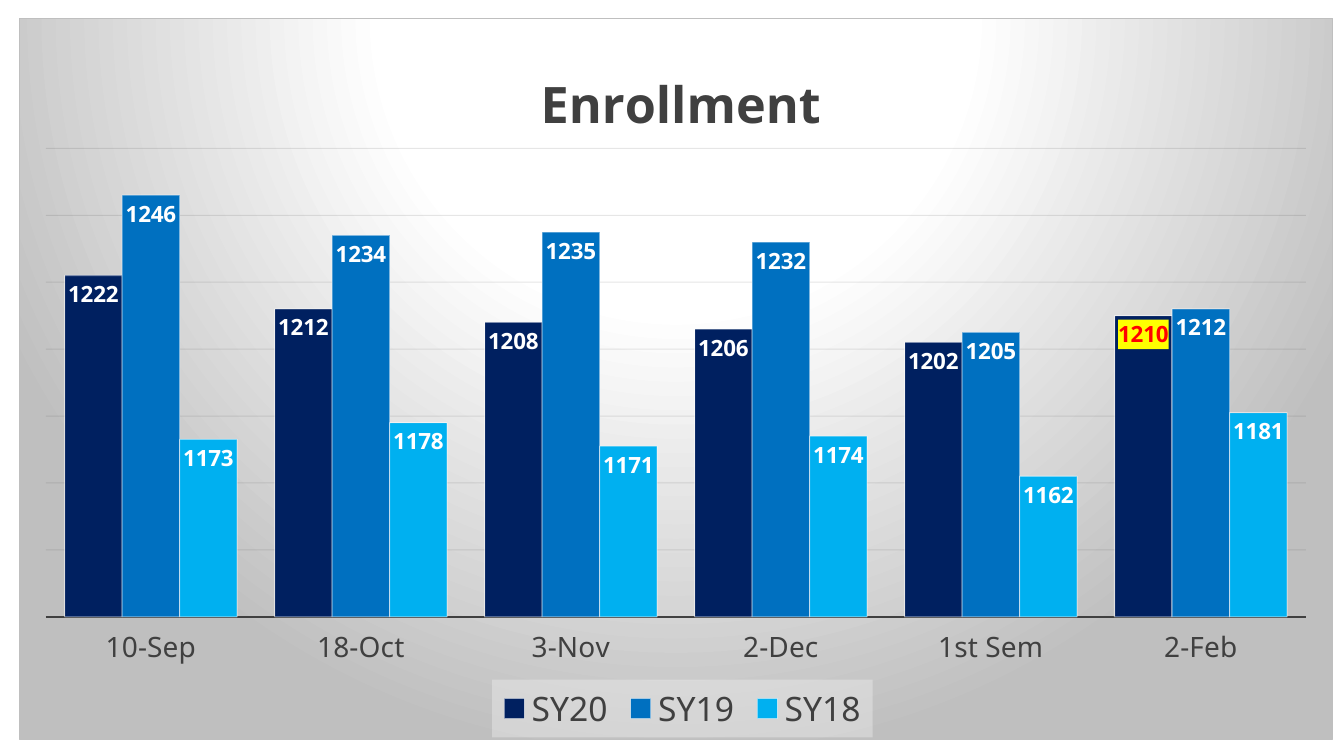
from typing import NamedTuple

from lxml import etree
from pptx import Presentation
from pptx.chart.data import CategoryChartData
from pptx.dml.color import RGBColor
from pptx.enum.chart import XL_CHART_TYPE, XL_LABEL_POSITION, XL_LEGEND_POSITION, XL_TICK_LABEL_POSITION, XL_TICK_MARK
from pptx.oxml import parse_xml
from pptx.oxml.ns import nsdecls, qn
from pptx.util import Pt

COLUMNS = XL_CHART_TYPE.COLUMN_CLUSTERED
INSIDE_END = XL_LABEL_POSITION.INSIDE_END
BOTTOM = XL_LEGEND_POSITION.BOTTOM
NO_TICK = XL_TICK_MARK.NONE
LOW = XL_TICK_LABEL_POSITION.LOW
FONT = "Noto Sans"
GREY = "404040"


class SchoolYear(NamedTuple):
    name: str
    color: str
    enrolled: tuple[int, ...]


DATES = ("10-Sep", "18-Oct", "3-Nov", "2-Dec", "1st Sem", "2-Feb")
YEARS = (
    SchoolYear("SY20", "002060", (1222, 1212, 1208, 1206, 1202, 1210)),
    SchoolYear("SY19", "0070C0", (1246, 1234, 1235, 1232, 1205, 1212)),
    SchoolYear("SY18", "00B0F0", (1173, 1178, 1171, 1174, 1162, 1181)),
)


def rgb(color: str) -> RGBColor:
    return RGBColor.from_string(color)


def set_font(font, size: float, color: str, bold: bool = False) -> None:
    font.name = FONT
    font.size = Pt(size)
    font.bold = bold
    font.color.rgb = rgb(color)


def set_line(line, color: str, width: float, opacity: int = 100) -> None:
    """Format a line, with its opacity in percent."""
    line.width = Pt(width)
    line.color.rgb = rgb(color)
    if opacity < 100:
        for clr in line._ln.iter(qn("a:srgbClr")):
            etree.SubElement(clr, qn("a:alpha"), val=str(opacity * 1000))


def shape_properties(content: str):
    return parse_xml(f"<c:spPr {nsdecls('c', 'a')}>{content}</c:spPr>")


def solid(color: str, opacity: int = 100) -> str:
    return (f'<a:solidFill><a:srgbClr val="{color}"><a:alpha val="{opacity * 1000}"/>'
            "</a:srgbClr></a:solidFill>")


def place(parent, index: int, target: str = "", **fractions: float) -> None:
    """Lay out a chart part by fractions of the chart area."""
    layout = parent.find(qn("c:layout"))
    if layout is None:
        layout = etree.Element(qn("c:layout"))
        parent.insert(index, layout)
    manual = etree.SubElement(layout, qn("c:manualLayout"))
    if target:
        etree.SubElement(manual, qn("c:layoutTarget"), val=target)
    for mode in ("xMode", "yMode"):
        etree.SubElement(manual, qn(f"c:{mode}"), val="edge")
    for key, value in fractions.items():
        etree.SubElement(manual, qn(f"c:{key}"), val=str(value))


def format_area(chart) -> None:
    """Give the chart area its radial gradient and border."""
    stops = "".join(f'<a:gs pos="{pos * 1000}"><a:srgbClr val="{color}"/></a:gs>'
                    for pos, color in ((0, "FFFFFF"), (39, "FFFFFF"), (100, "BFBFBF")))
    area = shape_properties(
        f'<a:gradFill><a:gsLst>{stops}</a:gsLst><a:path path="circle">'
        '<a:fillToRect l="50000" t="-80000" r="50000" b="180000"/></a:path></a:gradFill>'
        f'<a:ln w="{Pt(0.75)}">{solid("BFBFBF")}</a:ln>')
    chart.element.find(qn("c:chart")).addnext(area)


def format_title(chart) -> None:
    chart.has_title = True
    title = chart.chart_title
    title.include_in_layout = False
    p = title.text_frame.paragraphs[0]
    p.text = "Enrollment"
    set_font(p.font, 36, GREY, bold=True)
    place(chart.element.xpath("c:chart/c:title")[0], 1, x=0.39, y=0.05)


def format_axes(chart) -> None:
    dates = chart.category_axis
    dates.major_tick_mark = dates.minor_tick_mark = NO_TICK
    dates.tick_label_position = LOW
    set_font(dates.tick_labels.font, 20, GREY)
    set_line(dates.format.line, GREY, 1.5)
    values = chart.value_axis
    values.minimum_scale, values.maximum_scale, values.major_unit = 1120, 1260, 20
    values.visible = False
    values.has_major_gridlines = True
    set_line(values.major_gridlines.format.line, "0D0D0D", 0.75, opacity=10)
    place(chart.element.xpath("c:chart/c:plotArea")[0], 0, "inner", x=0.02, y=0.18, w=0.96, h=0.65)


def format_columns(chart) -> None:
    plot = chart.plots[0]
    plot.gap_width, plot.overlap, plot.vary_by_categories = 65, 0, False
    for series, year in zip(plot.series, YEARS):
        series.format.fill.solid()
        series.format.fill.fore_color.rgb = rgb(year.color)
        set_line(series.format.line, "FFFFFF", 0.75, opacity=50)
        labels = series.data_labels
        labels.show_value = True
        labels.position = INSIDE_END
        set_font(labels.font, 16, "FFFFFF", bold=True)


def highlight_latest(chart) -> None:
    label = chart.plots[0].series[0].points[len(DATES) - 1].data_label
    set_font(label.font, 16, "FF0000", bold=True)
    label.position = INSIDE_END
    chart.element.xpath(".//c:dLbl/c:txPr")[0].addprevious(shape_properties(solid("FFFF00")))


def format_legend(chart) -> None:
    chart.has_legend = True
    legend = chart.legend
    legend.position = BOTTOM
    legend.include_in_layout = False
    set_font(legend.font, 24, GREY)
    element = chart.element.xpath("c:chart/c:legend")[0]
    element.find(qn("c:txPr")).addprevious(shape_properties(solid("F2F2F2", 39)))
    place(element, 1, x=0.36, y=0.92, w=0.29, h=0.08)


def main() -> None:
    prs = Presentation()
    prs.slide_width, prs.slide_height = Pt(960), Pt(540)
    slide = prs.slides.add_slide(prs.slide_layouts[6])
    data = CategoryChartData()
    data.categories = DATES
    for year in YEARS:
        data.add_series(year.name, year.enrolled)
    chart = slide.shapes.add_chart(COLUMNS, Pt(13.7), Pt(13), Pt(938.2), Pt(515.5), data).chart
    set_font(chart.font, 10, "000000")
    format_area(chart)
    format_title(chart)
    format_axes(chart)
    format_columns(chart)
    highlight_latest(chart)
    format_legend(chart)
    prs.save("out.pptx")


if __name__ == "__main__":
    main()
